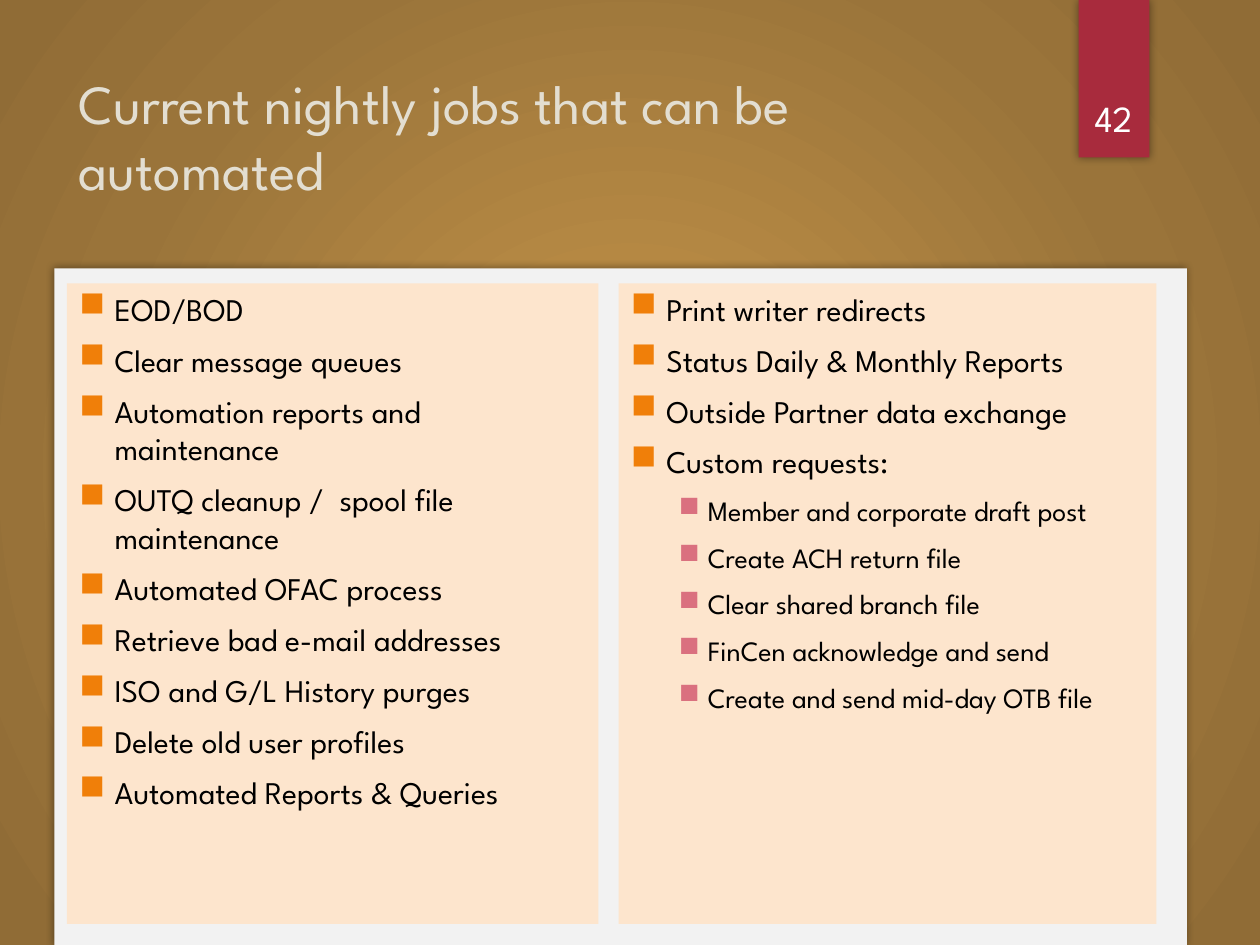
from dataclasses import dataclass

from lxml import etree
from pptx import Presentation
from pptx.dml.color import RGBColor
from pptx.enum.shapes import MSO_SHAPE
from pptx.enum.text import MSO_ANCHOR, PP_ALIGN
from pptx.oxml import parse_xml
from pptx.oxml.ns import nsdecls, qn
from pptx.util import Pt

RECT = MSO_SHAPE.RECTANGLE
TOP, BOTTOM = MSO_ANCHOR.TOP, MSO_ANCHOR.BOTTOM
LEFT, CENTER = PP_ALIGN.LEFT, PP_ALIGN.CENTER


@dataclass(frozen=True)
class Theme:
    """Colours, font and type sizes of the slide."""
    font: str = "League Spartan"
    backdrop: tuple = ((0, "B78A44"), (23, "B78A44"), (69, "9A743A"), (97, "906C36"))
    panel: str = "F2F2F2"
    ribbon: str = "A82B3D"
    column: str = "FDE5CD"
    title: str = "E3DED1"
    body: str = "000000"
    number: str = "FFFFFF"
    title_size: float = 31.5
    number_size: float = 21
    space_before: float = 7.5


@dataclass(frozen=True)
class Level:
    """Type size, bullet and indents of one list level."""
    size: float
    bullet: str
    bullet_pct: int
    margin: float
    hang: float


THEME = Theme()
LEVELS = (Level(18, "F07F09", 110, 20.16, 20.16), Level(16, "DA707F", 100, 43.92, 16.56))

DAILY_JOBS = [(0, text) for text in (
    "EOD/BOD",
    "Clear message queues",
    "Automation reports and maintenance",
    "OUTQ cleanup /  spool file maintenance",
    "Automated OFAC process",
    "Retrieve bad e-mail addresses",
    "ISO and G/L History purges",
    "Delete old user profiles",
    "Automated Reports & Queries",
)]
OTHER_JOBS = [(0, text) for text in (
    "Print writer redirects",
    "Status Daily & Monthly Reports",
    "Outside Partner data exchange",
    "Custom requests:",
)] + [(1, text) for text in (
    "Member and corporate draft post",
    "Create ACH return file",
    "Clear shared branch file",
    "FinCen acknowledge and send",
    "Create and send mid-day OTB file",
)]


def paint_background(s):
    """Fill the slide with a circular gradient."""
    s.background.fill.gradient()
    old = s.element.find(".//" + qn("a:gradFill"))
    stops = "".join(f'<a:gs pos="{pos * 1000}"><a:srgbClr val="{color}"/></a:gs>'
                    for pos, color in THEME.backdrop)
    old.getparent().replace(old, parse_xml(
        f'<a:gradFill {nsdecls("a")} rotWithShape="1"><a:gsLst>{stops}</a:gsLst>'
        '<a:path path="circle"><a:fillToRect l="50000" t="50000" r="50000" b="50000"/>'
        '</a:path></a:gradFill>'))


def add_rect(s, box, color):
    """Add a plain filled rectangle."""
    sp = s.shapes.add_shape(RECT, *map(Pt, box))
    sp.shadow.inherit = False
    sp.fill.solid()
    sp.fill.fore_color.rgb = RGBColor.from_string(color)
    sp.line.fill.background()
    return sp


def add_raised_rect(s, box, color):
    """Add a filled rectangle with a soft shadow all round."""
    sp = add_rect(s, box, color)
    sp.element.spPr.find(qn("a:effectLst")).append(parse_xml(
        f'<a:outerShdw {nsdecls("a")} blurRad="{Pt(5)}" dist="0" dir="0" rotWithShape="0">'
        '<a:srgbClr val="000000"><a:alpha val="40000"/></a:srgbClr></a:outerShdw>'))


def style_paragraph(p, size, color, align=LEFT):
    """Set font, size, colour and alignment of a paragraph."""
    p.alignment = align
    p.font.name = THEME.font
    p.font.size = Pt(size)
    p.font.color.rgb = RGBColor.from_string(color)


def add_text(s, box, text, size, color, anchor=TOP, align=LEFT):
    """Add a wrapped one-paragraph text box."""
    tf = s.shapes.add_textbox(*map(Pt, box)).text_frame
    tf.word_wrap = True
    tf.vertical_anchor = anchor
    p = tf.paragraphs[0]
    p.text = text
    style_paragraph(p, size, color, align)


def add_bullet(p, level):
    """Give a paragraph a square bullet and a hanging indent."""
    pPr = p._p.get_or_add_pPr()
    pPr.set("marL", str(Pt(level.margin)))
    pPr.set("indent", str(-Pt(level.hang)))
    color = etree.Element(qn("a:buClr"))
    etree.SubElement(color, qn("a:srgbClr"), val=level.bullet)
    size = etree.Element(qn("a:buSzPct"), val=str(level.bullet_pct * 1000))
    char = etree.Element(qn("a:buChar"), char="■")
    pPr.find(qn("a:defRPr")).addprevious(color)
    color.addnext(size)
    size.addnext(char)


def add_job_list(s, box, jobs):
    """Add a tinted column with a two-level bulleted list."""
    tf = add_rect(s, box, THEME.column).text_frame
    tf.word_wrap = True
    tf.vertical_anchor = TOP
    for i, (depth, text) in enumerate(jobs):
        p = tf.add_paragraph() if i else tf.paragraphs[0]
        level = LEVELS[depth]
        p.text = text
        p.level = depth
        p.space_before = Pt(THEME.space_before)
        style_paragraph(p, level.size, THEME.body)
        add_bullet(p, level)


def add_page_ribbon(s, box, number):
    """Add the ribbon at the top edge with the page number on it."""
    x, y, w, h = box
    add_raised_rect(s, box, THEME.ribbon)
    add_text(s, (x - 5, y + 23, w + 9.5, h - 29.5), number,
             THEME.number_size, THEME.number, BOTTOM, CENTER)


def main():
    """Build and save the slide."""
    prs = Presentation()
    prs.slide_width, prs.slide_height = Pt(720), Pt(540)
    s = prs.slides.add_slide(prs.slide_layouts[6])
    paint_background(s)
    add_raised_rect(s, (31, 153.4, 647.3, 386.6), THEME.panel)
    add_page_ribbon(s, (616.3, 0, 40.5, 90), "42")
    add_text(s, (38, 36, 555, 110), "Current nightly jobs that can be automated",
             THEME.title_size, THEME.title)
    add_job_list(s, (38.2, 162, 303.8, 366), DAILY_JOBS)
    add_job_list(s, (353.5, 162, 307.4, 366), OTHER_JOBS)
    prs.save("out.pptx")


if __name__ == "__main__":
    main()
